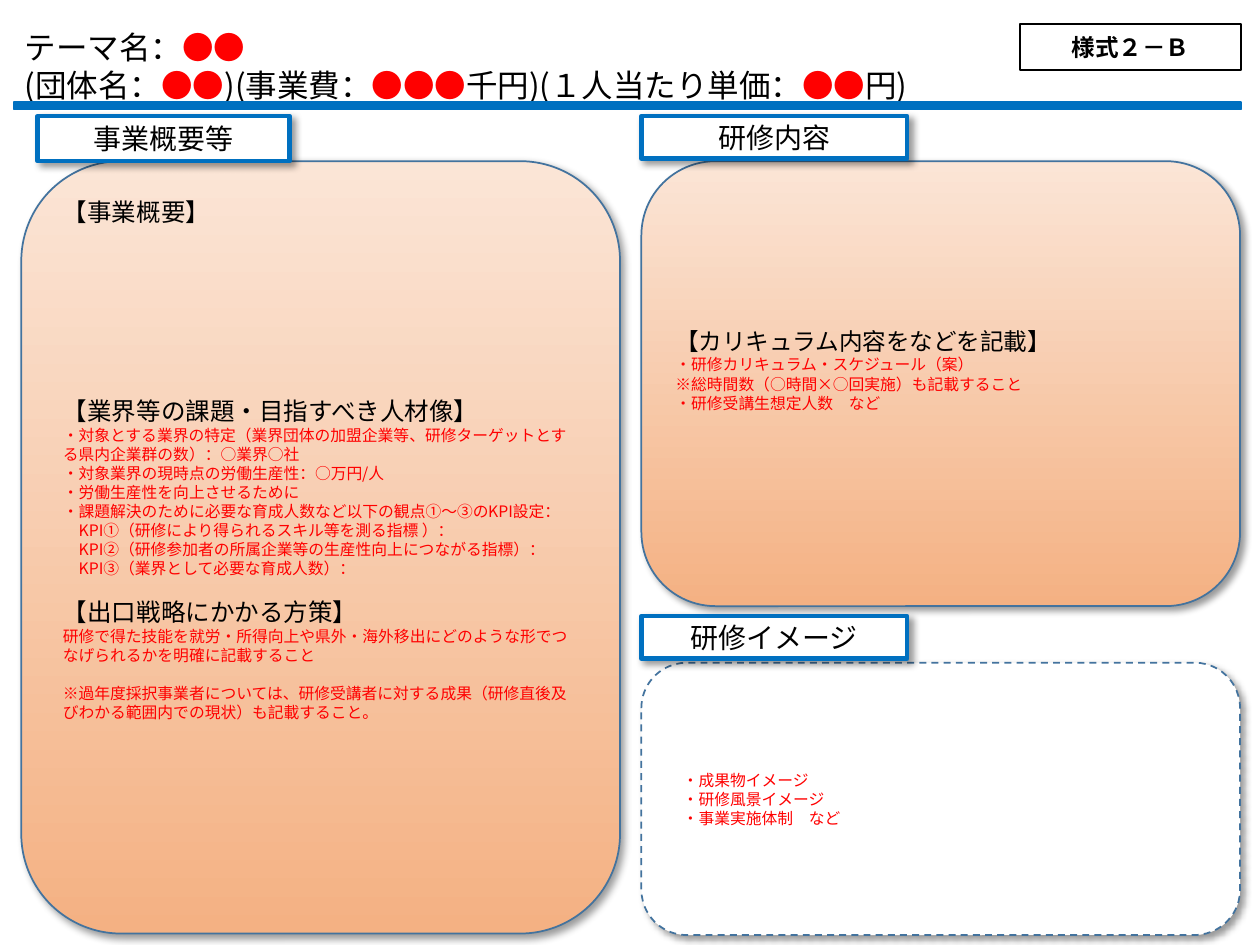
from dataclasses import dataclass
from itertools import groupby

from lxml import etree
from pptx import Presentation
from pptx import util as u
from pptx.dml.color import RGBColor
from pptx.enum import dml, shapes, text
from pptx.oxml.ns import qn


@dataclass(frozen=True)
class Theme:
    face: str = "Noto Sans CJK JP"
    black: str = "000000"
    red: str = "FF0000"
    white: str = "FFFFFF"
    blue: str = "0070C0"
    edge: str = "43739E"
    peach: tuple = ("FBE5D6", "F4B183")
    title: float = 18
    tag: float = 16
    head: float = 14
    sub: float = 13.5
    note: float = 9
    pitch: float = 1.21  # line height over type size


T = Theme()
rgb = RGBColor.from_string
Rect = shapes.MSO_SHAPE.RECTANGLE
Round = shapes.MSO_SHAPE.ROUNDED_RECTANGLE
Left, Mid = text.PP_ALIGN.LEFT, text.PP_ALIGN.CENTER
Top, Half = text.MSO_ANCHOR.TOP, text.MSO_ANCHOR.MIDDLE


def write(shape, lines, align=Left, anchor=Half, bold=False):
    """Fill shape with (text, size, colour, space before) lines; ● is always red."""
    frame = shape.text_frame
    frame.word_wrap = True
    frame.vertical_anchor = anchor
    for i, (line, size, tint, gap) in enumerate(lines):
        para = frame.paragraphs[0] if i == 0 else frame.add_paragraph()
        form = {"alignment": align, "space_before": u.Pt(gap),
                "line_spacing": u.Pt(round(size * T.pitch, 1))}
        for key, val in form.items():
            setattr(para, key, val)
        for dot, part in groupby(line, lambda c: c == "●"):
            run = para.add_run()
            run.text = "".join(part)
            for key, val in {"name": T.face, "size": u.Pt(size), "bold": bold}.items():
                setattr(run.font, key, val)
            run.font.color.rgb = rgb(T.red if dot else tint)
            etree.SubElement(run.font._element, qn("a:ea"), typeface=T.face)


def draw(kind, area, fill, line, width=1, shade=True):
    """Add a shape; a pair of fill colours makes a gradient from top to bottom."""
    shape = slide.shapes.add_shape(kind, *map(u.Cm, area))
    if isinstance(fill, tuple):
        shape.fill.gradient()
        shape.fill.gradient_angle = 270
        for stop, tint, place in zip(shape.fill.gradient_stops, fill, (0, 1)):
            stop.color.rgb = rgb(tint)
            stop.position = place
    else:
        shape.fill.solid()
        shape.fill.fore_color.rgb = rgb(fill)
    shape.line.color.rgb = rgb(line)
    shape.line.width = u.Pt(width)
    shape.shadow.inherit = False
    if shade:
        glow = etree.SubElement(
            shape._element.spPr.find(qn("a:effectLst")), qn("a:outerShdw"),
            blurRad=str(u.Pt(4)), dist=str(u.Pt(3)), dir="2700000",
            algn="tl", rotWithShape="0")
        tone = etree.SubElement(glow, qn("a:srgbClr"), val=T.black)
        etree.SubElement(tone, qn("a:alpha"), val="40000")
    return shape


deck = Presentation()
deck.slide_width, deck.slide_height = u.Cm(25.4), u.Cm(19.05)
slide = deck.slides.add_slide(deck.slide_layouts[6])

# Title and rule
title = slide.shapes.add_textbox(*map(u.Cm, (0.25, 0.43, 20.07, 1.8)))
write(title, [(line, T.title, T.black, 0) for line in (
    "テーマ名：●●",
    "(団体名：●●)(事業費：●●●千円)(１人当たり単価：●●円)",
)], anchor=Top)
draw(Rect, (0.28, 2.06, 24.74, 0.15), T.blue, T.blue, shade=False)

# Panels
col, wide, row = 12.93, 12.07, 3.25
plan = draw(Round, (0.43, row, wide, 15.57), T.peach, T.edge)
course = draw(Round, (col, row, wide, 8.97), T.peach, T.edge)
image = draw(Round, (col, 13.36, wide, 5.49), T.white, T.edge)
image.line.dash_style = dml.MSO_LINE.DASH

space = round(T.note * T.pitch, 1)
head = (T.head, T.black)
note = (T.note, T.red)
write(plan, [
    ("【事業概要】", *head, 0),
    ("【業界等の課題・目指すべき人材像】", *head, 96.8),
    ("・対象とする業界の特定（業界団体の加盟企業等、研修ターゲットとする県内企業群の数）：○業界○社", *note, 0),
    ("・対象業界の現時点の労働生産性：○万円/人", *note, 0),
    ("・労働生産性を向上させるために", *note, 0),
    ("・課題解決のために必要な育成人数など以下の観点①～③のKPI設定：", *note, 0),
    ("　KPI①（研修により得られるスキル等を測る指標 ）：", *note, 0),
    ("　KPI②（研修参加者の所属企業等の生産性向上につながる指標）：", *note, 0),
    ("　KPI③（業界として必要な育成人数）：", *note, 0),
    ("【出口戦略にかかる方策】", *head, space),
    ("研修で得た技能を就労・所得向上や県外・海外移出にどのような形でつなげられるかを明確に記載すること", *note, 0),
    ("※過年度採択事業者については、研修受講者に対する成果（研修直後及びわかる範囲内での現状）も記載すること。", *note, space),
], anchor=Top)

course.text_frame.margin_bottom = u.Cm(0.7)
write(course, [
    ("【カリキュラム内容をなどを記載】", T.sub, T.black, 0),
    ("・研修カリキュラム・スケジュール（案）", *note, 0),
    ("※総時間数（○時間×○回実施）も記載すること", *note, 0),
    ("・研修受講生想定人数　など", *note, 0),
])
write(image, [(line, *note, 0) for line in (
    "　・成果物イメージ", "　・研修風景イメージ", "　・事業実施体制　など")])

# Panel tags
for name, area in (
    ("研修内容", (col, 2.34, 5.36, 0.86)),
    ("事業概要等", (0.76, 2.34, 5.08, 0.91)),
    ("研修イメージ", (col, 12.42, 5.36, 0.86)),
):
    write(draw(Rect, area, T.white, T.blue, 2.5), [(name, T.tag, T.black, 0)], Mid)

# Form number
form = draw(Rect, (20.57, 0.48, 4.45, 0.94), T.white, T.black, shade=False)
write(form, [("様式２－Ｂ", T.sub, T.black, 0)], Mid, bold=True)

deck.save("out.pptx")
